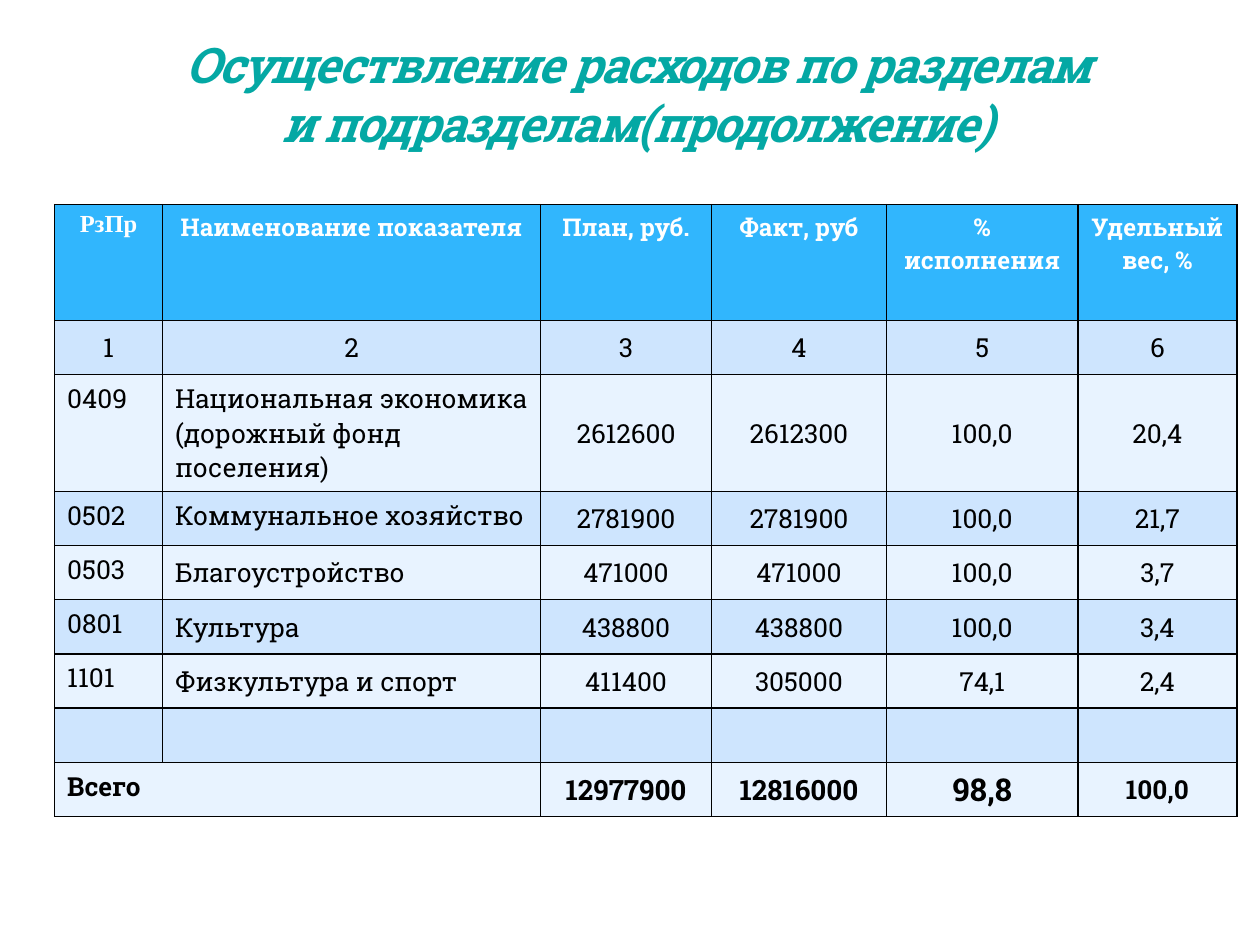
from lxml import etree
from pptx import Presentation
from pptx.dml.color import RGBColor
from pptx.enum.text import MSO_ANCHOR, MSO_AUTO_SIZE, PP_ALIGN
from pptx.oxml.ns import qn
from pptx.util import Pt

LEFT, CENTER = PP_ALIGN.LEFT, PP_ALIGN.CENTER
TOP, MIDDLE, BOTTOM = MSO_ANCHOR.TOP, MSO_ANCHOR.MIDDLE, MSO_ANCHOR.BOTTOM
NO_FIT = MSO_AUTO_SIZE.NONE

SLAB, TIMES = "Roboto Slab", "Times New Roman"
BLACK, WHITE, TEAL = "000000", "FFFFFF", "04A8A4"
HEAD, DARK, PALE = "31B6FD", "CEE5FE", "E8F3FF"

TITLE = "Осуществление расходов по разделам и подразделам(продолжение)"
ROWS = [
    ["РзПр", "Наименование показателя", "План, руб.", "Факт, руб",
     "% исполнения", "Удельный вес, %"],
    ["1", "2", "3", "4", "5", "6"],
    ["0409", "Национальная экономика (дорожный фонд поселения)",
     "2612600", "2612300", "100,0", "20,4"],
    ["0502", "Коммунальное хозяйство", "2781900", "2781900", "100,0", "21,7"],
    ["0503", "Благоустройство", "471000", "471000", "100,0", "3,7"],
    ["0801", "Культура", "438800", "438800", "100,0", "3,4"],
    ["1101", "Физкультура и спорт", "411400", "305000", "74,1", "2,4"],
    [""] * 6,
    ["Всего", "", "12977900", "12816000", "98,8", "100,0"],
]
LAST = len(ROWS) - 1
WIDTHS = [61.7, 216, 97.7, 100, 109.4, 90.8]
HEIGHTS = [66.2, 31, 46.1] + [31] * 6
TOTAL_SIZES = [15, 15, 16, 16, 18, 15]


def color(text):
    return RGBColor.from_string(text)


class Deck:
    def __init__(self):
        self.prs = Presentation()
        self.prs.slide_width, self.prs.slide_height = Pt(720), Pt(540)
        self.slide = self.prs.slides.add_slide(self.prs.slide_layouts[5])

    def style(self, para, size, hue, bold, align, face=SLAB):
        para.alignment = align
        font = para.font
        font.name, font.size, font.bold = face, Pt(size), bold
        font.color.rgb = color(hue)

    def title(self, text, x, y, w, h):
        box = self.slide.shapes.title
        box.left, box.top, box.width, box.height = Pt(x), Pt(y), Pt(w), Pt(h)
        frame = box.text_frame
        frame.text = text
        frame.word_wrap = True
        frame.auto_size = NO_FIT
        frame.vertical_anchor = BOTTOM
        para = frame.paragraphs[0]
        self.style(para, 28, TEAL, True, CENTER)
        para.font.italic = True
        # Tighten letters by one point
        para.runs[0].font._element.set("spc", "-100")

    def border(self, cell):
        props = cell._tc.get_or_add_tcPr()
        for side in ("lnL", "lnR", "lnT", "lnB"):
            line = etree.SubElement(props, qn(f"a:{side}"), w=str(Pt(1)))
            fill = etree.SubElement(line, qn("a:solidFill"))
            etree.SubElement(fill, qn("a:srgbClr"), val=BLACK)

    def cell(self, cell, text, fill, anchor, **look):
        cell.text = text
        cell.vertical_anchor = anchor
        self.border(cell)
        cell.fill.solid()
        cell.fill.fore_color.rgb = color(fill)
        self.style(cell.text_frame.paragraphs[0], **look)

    def table(self, x, y):
        frame = self.slide.shapes.add_table(
            len(ROWS), len(WIDTHS), Pt(x), Pt(y),
            Pt(sum(WIDTHS)), Pt(sum(HEIGHTS)))
        grid = frame.table
        grid.first_row = grid.horz_banding = False
        for col, width in zip(grid.columns, WIDTHS):
            col.width = Pt(width)
        for row, height in zip(grid.rows, HEIGHTS):
            row.height = Pt(height)
        for r, row in enumerate(ROWS):
            for c, text in enumerate(row):
                head, total = r == 0, r == LAST
                high = head or (c == 0 and r > 1) or (c == 1 and r in (2, 3))
                self.cell(
                    grid.cell(r, c), text,
                    HEAD if head else DARK if r % 2 else PALE,
                    TOP if high else MIDDLE,
                    size=14 if head else TOTAL_SIZES[c] if total else 15,
                    hue=WHITE if head else BLACK,
                    bold=head or total,
                    align=LEFT if r > 1 and c < 2 else CENTER,
                    face=TIMES if head and c == 0 else SLAB)
        # Total label spans the first two columns
        grid.cell(LAST, 0).merge(grid.cell(LAST, 1))


def main():
    deck = Deck()
    # Spending table
    deck.table(31.2, 116.9)
    # Heading
    deck.title(TITLE, 87.8, 54.7, 553, 36)
    deck.prs.save("out.pptx")


if __name__ == "__main__":
    main()
